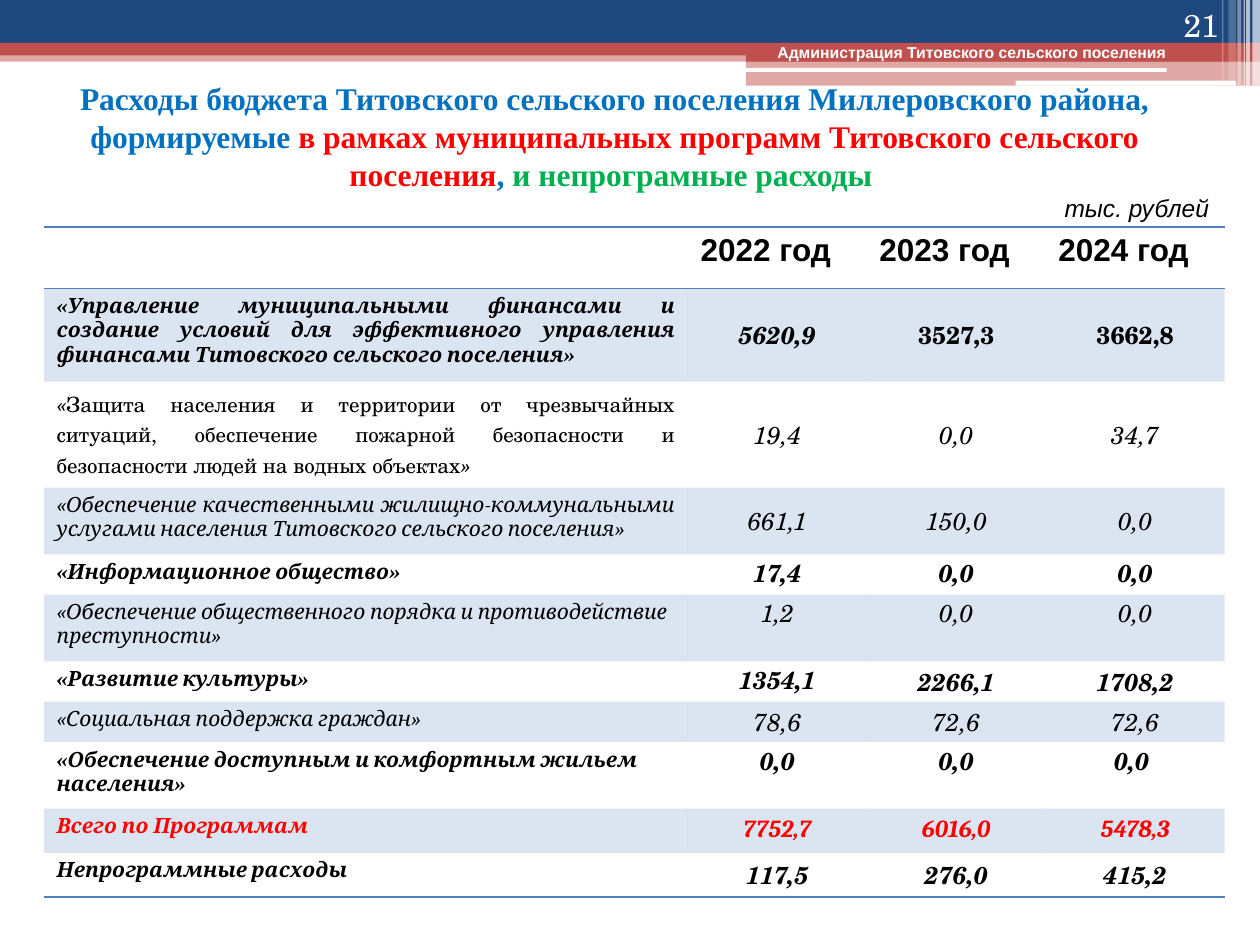
import pptx
import pptx.util
import pptx.dml.color
import pptx.enum.shapes
import pptx.enum.text
import pptx.oxml
import pptx.oxml.ns

Inches, Pt = pptx.util.Inches, pptx.util.Pt
RGBColor = pptx.dml.color.RGBColor
SHAPE = pptx.enum.shapes.MSO_SHAPE
ALIGN = pptx.enum.text.PP_ALIGN
ANCHOR = pptx.enum.text.MSO_ANCHOR
qn = pptx.oxml.ns.qn

NAVY = RGBColor(0x1F, 0x49, 0x7D)
BRICK = RGBColor(0xC0, 0x50, 0x4D)
STEEL = RGBColor(0x4F, 0x81, 0xBD)
BLUE = RGBColor(0x00, 0x70, 0xC0)
GREEN = RGBColor(0x00, 0xB0, 0x50)
RED = RGBColor(0xFF, 0, 0)
BLACK = RGBColor(0, 0, 0)
WHITE = RGBColor(0xFF, 0xFF, 0xFF)

SCHOLA = "TeX Gyre Schola"
NO_GRID_STYLE = "{2D5ABB26-0587-4C30-8999-92F81FD0307C}"

YEARS = ["2022 год", "2023 год", "2024 год"]
PROGRAMS = [
    (0.74, "«Управление муниципальными финансами и создание условий для эффективного управления финансами Титовского сельского поселения»", ["5620,9", "3527,3", "3662,8"], True),
    (0.84, "«Защита населения и территории от чрезвычайных ситуаций, обеспечение пожарной безопасности и безопасности людей на водных объектах»", ["19,4", "0,0", "34,7"], False),
    (0.53, "«Обеспечение качественными жилищно-коммунальными услугами населения Титовского сельского поселения»", ["661,1", "150,0", "0,0"], False),
    (0.32, "«Информационное общество»", ["17,4", "0,0", "0,0"], True),
    (0.53, "«Обеспечение общественного порядка и противодействие преступности»", ["1,2", "0,0", "0,0"], False),
    (0.32, "«Развитие культуры»", ["1354,1", "2266,1", "1708,2"], True),
    (0.32, "«Социальная поддержка граждан»", ["78,6", "72,6", "72,6"], False),
    (0.53, "«Обеспечение доступным и комфортным жильем населения»", ["0,0", "0,0", "0,0 "], True),
    (0.35, "Всего по Программам", ["7752,7", "6016,0", "5478,3"], True),
    (0.35, "Непрограммные расходы", ["117,5", "276,0", "415,2"], True),
]
JUSTIFIED_ROWS = (1, 2, 3)
TOP_ROWS = (4, 5, 8, 9)
SPACED_ROW, TOTAL_ROW = 2, 9


def set_alpha(element, percent):
    color = element.find(qn("a:solidFill")).find(qn("a:srgbClr"))
    color.append(pptx.oxml.parse_xml(
        f'<a:alpha {pptx.oxml.ns.nsdecls("a")} val="{percent * 1000}"/>'))


def add_bar(s, x, y, w, h, color, alpha=100, kind=SHAPE.RECTANGLE):
    sp = s.shapes.add_shape(kind, Inches(x), Inches(y), Inches(w), Inches(h))
    sp.shadow.inherit = False
    sp.fill.solid()
    sp.fill.fore_color.rgb = color
    sp.line.fill.background()
    if alpha < 100:
        set_alpha(sp._element.spPr, alpha)


def add_run(p, text, size, font, color, bold=False, italic=False):
    r = p.add_run()
    r.text = text
    r.font.size, r.font.name = Pt(size), font
    r.font.bold, r.font.italic = bold, italic
    r.font.color.rgb = color


def add_text(s, x, y, w, h, runs, align=ALIGN.LEFT, anchor=ANCHOR.TOP):
    sp = s.shapes.add_textbox(Inches(x), Inches(y), Inches(w), Inches(h))
    tf = sp.text_frame
    tf.word_wrap = True
    tf.vertical_anchor = anchor
    p = tf.paragraphs[0]
    p.alignment = align
    for run in runs:
        add_run(p, *run)


def add_banner(s, x, y, w, h):
    right = x + w
    add_bar(s, x, y + 0.4, w, 0.09, BRICK, 50)
    add_bar(s, x, y, w, 0.34, NAVY)
    add_bar(s, x, y + 0.34, w, 0.1, BRICK)
    add_bar(s, right - 4.08, y + 0.39, 4.08, 0.1, BRICK)
    add_bar(s, right - 4.08, y + 0.48, 4.08, h - 0.48, BRICK, 50)
    add_bar(s, right - 4.09, y + 0.54, 3.35, 0.03, WHITE, kind=SHAPE.ROUNDED_RECTANGLE)
    add_bar(s, right - 1.94, y + 0.64, 1.75, 0.04, WHITE, kind=SHAPE.ROUNDED_RECTANGLE)
    stripes = [(0.06, 0.06, h, 65), (0.11, 0.03, h, 65), (0.13, 0.01, h, 60),
               (0.18, 0.03, h, 40), (0.25, 0.06, h - 0.04, 20), (0.3, 0.01, h - 0.04, 30)]
    for offset, width, height, alpha in stripes:
        add_bar(s, right - offset, y, width, height, WHITE, alpha)
    add_text(s, right - 1.06, y, 0.83, 0.4, [("21", 18, SCHOLA, WHITE)],
             ALIGN.RIGHT, ANCHOR.BOTTOM)
    add_text(s, right - 4.3, y + 0.29, 4.02, 0.25,
             [("Администрация Титовского сельского поселения", 9, "Arial", WHITE, True)],
             ALIGN.CENTER)


def add_title(s, x, y, w, h):
    parts = [
        ("Расходы бюджета Титовского сельского поселения Миллеровского района, формируемые ", BLUE),
        ("в рамках муниципальных программ Титовского сельского поселения", RED),
        (", ", BLUE),
        ("и непрограмные расходы ", GREEN),
    ]
    add_text(s, x, y, w, h,
             [(text, 18, "Times New Roman", color, True) for text, color in parts],
             ALIGN.CENTER, ANCHOR.MIDDLE)


def set_borders(cell, *sides):
    tcPr = cell._tc.get_or_add_tcPr()
    for i, side in enumerate(sides):
        tcPr.insert(i, pptx.oxml.parse_xml(
            f'<a:{side} {pptx.oxml.ns.nsdecls("a")} w="12700"><a:solidFill>'
            f'<a:srgbClr val="{STEEL}"/></a:solidFill></a:{side}>'))


def fill_label(cell, row, text, color, bold):
    p = cell.text_frame.paragraphs[0]
    if row in JUSTIFIED_ROWS:
        p.alignment = ALIGN.JUSTIFY
    if row == SPACED_ROW:
        p.line_spacing = Pt(17.7)
        add_run(p, text[0], 12, "Cambria", color, bold, True)
        add_run(p, text[1:-1], 12, SCHOLA, color, bold)
        add_run(p, text[-1], 12, "Cambria", color, bold, True)
    else:
        add_run(p, text, 12, "Cambria", color, bold, True)


def fill_value(cell, row, col, text, color, bold):
    if row != TOTAL_ROW:
        cell.margin_left = cell.margin_right = Inches(0.07)
        cell.margin_top = cell.margin_bottom = 0
    if row not in TOP_ROWS and (row, col) != (6, 1):
        cell.vertical_anchor = ANCHOR.MIDDLE
    p = cell.text_frame.paragraphs[0]
    p.alignment = ALIGN.CENTER
    font = "Cambria" if row == TOTAL_ROW else SCHOLA
    add_run(p, text, 14, font, color, bold, row != 1 or col == 1)


def add_budget_table(s, x, y, w, h):
    year_w = 1.42
    add_text(s, x + w - 1.37, y - 0.32, 1.42, 0.34,
             [("тыс. рублей", 14, "Arial", BLACK, False, True)])
    tbl = s.shapes.add_table(len(PROGRAMS) + 1, len(YEARS) + 1, Inches(x), Inches(y),
                             Inches(w), Inches(h)).table
    tbl.first_row = tbl.horz_banding = False
    tbl._tbl.tblPr.find(qn("a:tableStyleId")).text = NO_GRID_STYLE
    tbl.columns[0].width = Inches(w - year_w * len(YEARS))
    tbl.rows[0].height = Inches(h - sum(program[0] for program in PROGRAMS))
    for col, year in enumerate(YEARS, 1):
        tbl.columns[col].width = Inches(year_w)
        add_run(tbl.cell(0, col).text_frame.paragraphs[0], year, 18, "Arial", BLACK, True)
    for row, (height, label, values, bold) in enumerate(PROGRAMS, 1):
        tbl.rows[row].height = Inches(height)
        color = RED if row == TOTAL_ROW else BLACK
        fill_label(tbl.cell(row, 0), row, label, color, bold)
        for col, value in enumerate(values, 1):
            fill_value(tbl.cell(row, col), row, col, value, color, bold)
    for row in range(len(PROGRAMS) + 1):
        for col in range(len(YEARS) + 1):
            cell = tbl.cell(row, col)
            if row % 2:
                cell.fill.solid()
                cell.fill.fore_color.rgb = STEEL
                set_alpha(cell._tc.tcPr, 20)
            else:
                cell.fill.background()
            if row == 0:
                set_borders(cell, "lnT", "lnB")
            elif row == len(PROGRAMS):
                set_borders(cell, "lnB")


def main():
    prs = pptx.Presentation()
    prs.slide_width, prs.slide_height = Inches(10), Inches(7.5)
    s = prs.slides.add_slide(prs.slide_layouts[6])
    add_banner(s, 0, 0, 10, 0.68)
    add_title(s, 0, 0.6, 9.76, 0.96)
    add_budget_table(s, 0.35, 1.8, 9.37, 5.32)
    prs.save("out.pptx")


if __name__ == "__main__":
    main()
